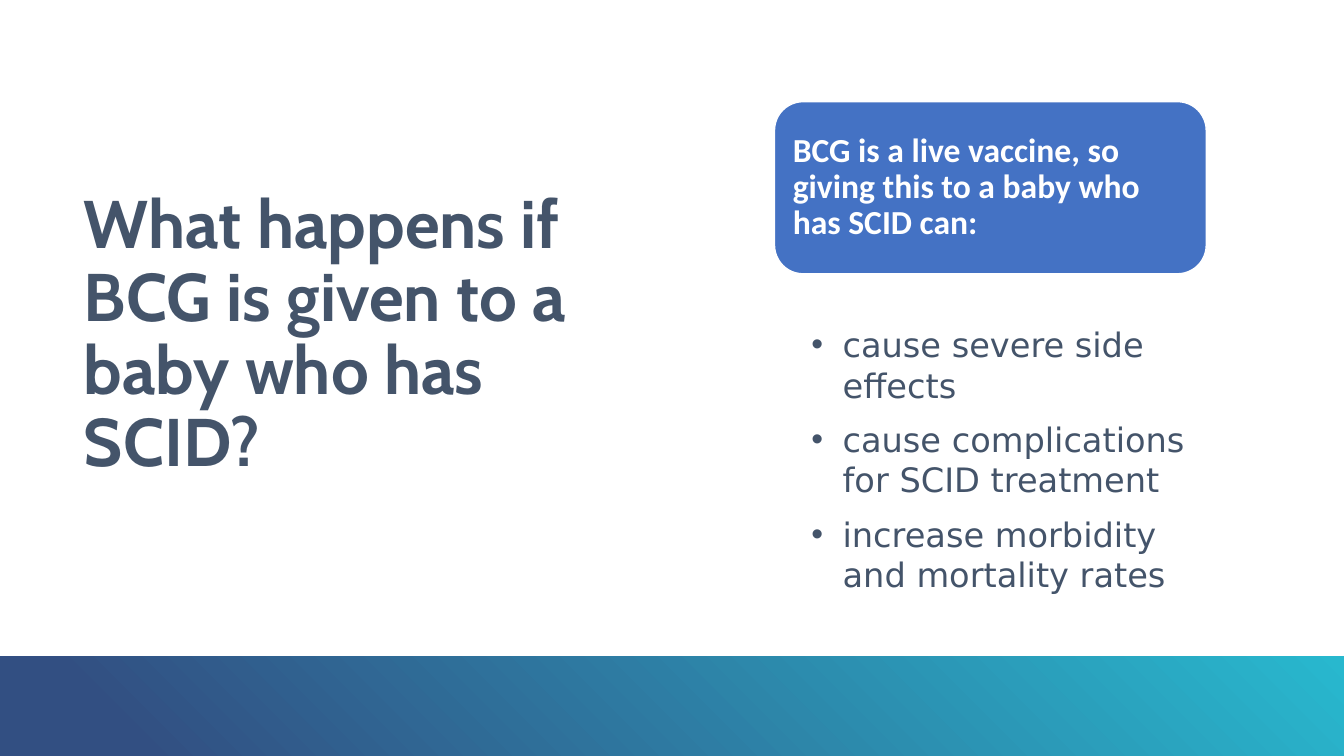
from lxml.etree import SubElement as Sub
from pptx import Presentation
from pptx.dml.color import RGBColor as Rgb
from pptx.enum.shapes import MSO_SHAPE as Form
from pptx.enum.text import MSO_ANCHOR as Anchor, PP_ALIGN as Align
from pptx.oxml.ns import qn
from pptx.util import Inches, Pt

COLS, ROWS = 160, 90


def tint(code):
    return Rgb.from_string(code)


class Deck:
    """Holds the style and the current slide, measured in grid columns and rows."""

    ink, blue, white = "44546A", "4472C4", "FFFFFF"
    head, body, note = "Cabin", "DejaVu Sans", "Calibri"

    def __init__(self):
        self.deck = Presentation()
        self.deck.slide_width = Inches(13.33)
        self.deck.slide_height = Inches(7.5)
        self.slide = self.deck.slides.add_slide(self.deck.slide_layouts[6])

    def area(self, col, row, wide, high):
        x, y = self.deck.slide_width / COLS, self.deck.slide_height / ROWS
        return [round(n) for n in (col * x, row * y, wide * x, high * y)]

    def shape(self, form, *area):
        item = self.slide.shapes.add_shape(form, *self.area(*area))
        item.shadow.inherit = False
        return item

    def band(self, *area, stops):
        item = self.shape(Form.RECTANGLE, *area)
        item.line.fill.background()
        item.fill.gradient()
        item.fill.gradient_angle = 45
        for stop, (place, code) in zip(item.fill.gradient_stops, stops):
            stop.position, stop.color.rgb = place, tint(code)

    def label(self, item, lines, font, size, code, bold=False, lead=1,
              inset=0, anchor=Anchor.TOP, dots=False):
        frame = item.text_frame
        frame.word_wrap = True
        frame.vertical_anchor = anchor
        frame.margin_left = frame.margin_right = Inches(inset)
        frame.margin_top = frame.margin_bottom = Inches(inset)
        for i, line in enumerate(lines):
            para = frame.add_paragraph() if i else frame.paragraphs[0]
            para.alignment = Align.LEFT
            para.line_spacing = lead
            para.space_before = Pt(10 if i else 0)
            if dots:
                self.dot(para)
            run = para.add_run()
            run.text = line
            run.font.name, run.font.size = font, Pt(size)
            run.font.bold, run.font.color.rgb = bold, tint(code)

    def dot(self, para):
        prop = para._p.get_or_add_pPr()
        prop.set("marL", str(Inches(0.31)))
        prop.set("indent", str(-Inches(0.31)))
        Sub(prop, qn("a:buFont"), typeface="Arial")
        Sub(prop, qn("a:buChar"), char="•")

    def text(self, *area, lines, **style):
        item = self.slide.shapes.add_textbox(*self.area(*area))
        self.label(item, lines, **style)

    def card(self, *area, lines):
        item = self.shape(Form.ROUNDED_RECTANGLE, *area)
        item.fill.solid()
        item.fill.fore_color.rgb = tint(self.blue)
        item.line.color.rgb = tint(self.white)
        item.line.width = Pt(1)
        self.label(item, lines, self.note, 24, self.white, bold=True,
                   lead=0.9, inset=0.1, anchor=Anchor.MIDDLE)


def main():
    page = Deck()
    page.band(0, 78.1, COLS, ROWS - 78.1,
              stops=[(0.1, "324F82"), (1, "28B8CE")])
    page.text(10, 22.7, 59.2, 40.2, font=page.head, size=48.1, code=page.ink,
              bold=True, lead=0.9,
              lines=["What happens if BCG is given to a baby who has SCID?"])
    page.card(92.2, 12.1, 51.4, 20.5, lines=[
        "BCG is a live vaccine, so giving this to a baby who has SCID can:"])
    page.text(96.6, 38.6, 48.9, 38.4, font=page.body, size=24, code=page.ink,
              dots=True, lines=["cause severe side effects",
                                "cause complications for SCID treatment",
                                "increase morbidity and mortality rates"])
    page.deck.save("out.pptx")


if __name__ == "__main__":
    main()
